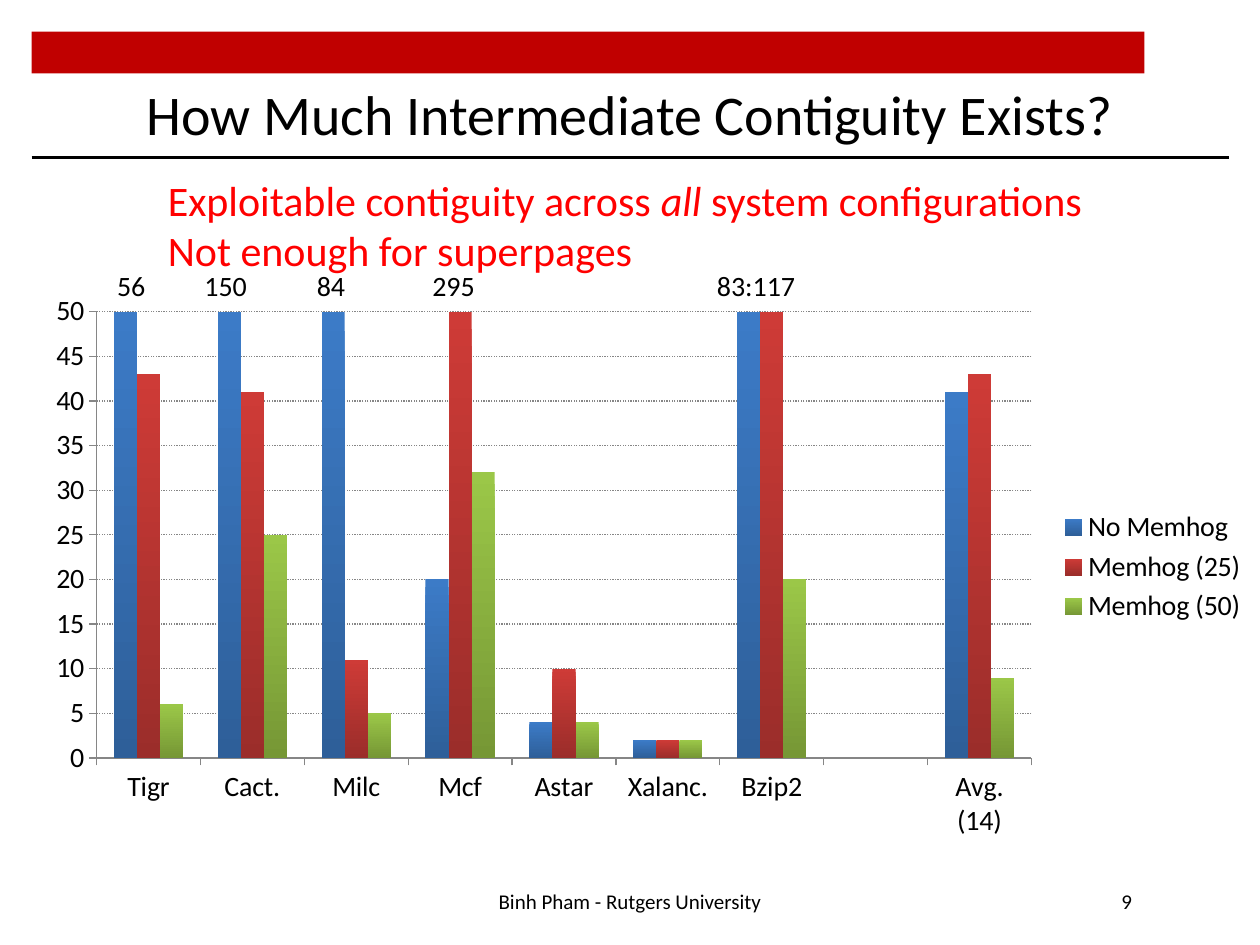
import pptx
import pptx.chart.data
import pptx.dml.color
import pptx.enum.chart
import pptx.enum.dml
import pptx.enum.shapes
import pptx.enum.text
import pptx.oxml
import pptx.oxml.ns
import pptx.util
from lxml import etree

RGB = pptx.dml.color.RGBColor
BLACK = RGB(0x00, 0x00, 0x00)
BANNER_RED = RGB(0xC0, 0x00, 0x00)
MESSAGE_RED = RGB(0xFF, 0x00, 0x00)
AXIS_GREY = RGB(0x86, 0x86, 0x86)
FONT = "Calibri"
ALIGN = pptx.enum.text.PP_ALIGN
ANCHOR = pptx.enum.text.MSO_ANCHOR
CELL = pptx.util.Inches(1) // 12  # the slide is 120 columns by 90 rows

CATEGORIES = ["Tigr", "Cact.", "Milc", "Mcf", "Astar", "Xalanc.", "Bzip2", "", "Avg. (14)"]
# name, values, colour at the top and at the foot of the bars
SERIES = [
    ("No Memhog", [56, 150, 84, 20, 4, 2, 83, None, 41],
     RGB(0x3C, 0x7B, 0xC7), RGB(0x2E, 0x5F, 0x99)),
    ("Memhog (25)", [43, 41, 11, 295, 10, 2, 118, None, 43],
     RGB(0xCE, 0x3B, 0x37), RGB(0x9B, 0x2D, 0x2A)),
    ("Memhog (50)", [6, 25, 5, 32, 4, 2, 20, None, 9],
     RGB(0x9B, 0xC7, 0x48), RGB(0x76, 0x97, 0x35)),
]
# text, left column, columns wide, alignment
CLIPPED_VALUES = [
    ("56", 8, 9, ALIGN.CENTER),
    ("150", 18, 7, ALIGN.CENTER),
    ("84", 29, 7, ALIGN.LEFT),
    ("295", 40, 7, ALIGN.LEFT),
    ("83:117", 67, 10, ALIGN.CENTER),
]


def cells(*box):
    """Turn columns and rows of the grid into lengths."""
    return [pptx.util.Emu(round(n * CELL)) for n in box]


def add_text(slide, box, paragraphs, size, color=BLACK, align=ALIGN.LEFT,
             anchor=ANCHOR.TOP, wrap=True):
    """Each paragraph is a list of (text, italic) runs."""
    frame = slide.shapes.add_textbox(*cells(*box)).text_frame
    frame.word_wrap = wrap
    frame.vertical_anchor = anchor
    for index, runs in enumerate(paragraphs):
        paragraph = frame.add_paragraph() if index else frame.paragraphs[0]
        paragraph.alignment = align
        for text, italic in runs:
            run = paragraph.add_run()
            run.text = text
            run.font.name = FONT
            run.font.size = pptx.util.Pt(size)
            run.font.italic = italic
            run.font.color.rgb = color


def add_header(slide, left, top, width, height):
    banner = slide.shapes.add_shape(pptx.enum.shapes.MSO_SHAPE.RECTANGLE,
                                    *cells(left, top, width - 8, height / 3))
    banner.shadow.inherit = False
    banner.fill.solid()
    banner.fill.fore_color.rgb = BANNER_RED
    banner.line.fill.background()
    bottom = top + height
    rule = slide.shapes.add_connector(pptx.enum.shapes.MSO_CONNECTOR.STRAIGHT,
                                      *cells(left, bottom, left + width, bottom))
    rule.line.color.rgb = BLACK
    rule.line.width = pptx.util.Pt(1.5)
    etree.SubElement(rule._element.spPr, pptx.oxml.ns.qn("a:effectLst"))
    add_text(slide, (left + 3, top + 4, width - 6, 7.5),
             [[("How Much Intermediate Contiguity Exists?", False)]],
             32, align=ALIGN.CENTER, anchor=ANCHOR.MIDDLE)


def add_footer(slide, top, height):
    for text, left, width, align in [("Binh Pham - Rutgers University", 41, 38, ALIGN.CENTER),
                                     ("9", 81, 28, ALIGN.RIGHT)]:
        add_text(slide, (left, top, width, height), [[(text, False)]], 12,
                 align=align, anchor=ANCHOR.MIDDLE)


def set_plot_area(chart, x, y, w, h):
    """Fix the inner plot area, in shares of the chart."""
    values = "".join(f'<c:{tag} val="{value}"/>' for tag, value in
                     [("xMode", "edge"), ("yMode", "edge"),
                      ("x", x), ("y", y), ("w", w), ("h", h)])
    layout = pptx.oxml.parse_xml(
        f'<c:layout {pptx.oxml.ns.nsdecls("c")}><c:manualLayout>'
        f'<c:layoutTarget val="inner"/>{values}</c:manualLayout></c:layout>')
    plot_area = chart._chartSpace.chart.plotArea
    for old in plot_area.findall(pptx.oxml.ns.qn("c:layout")):
        plot_area.remove(old)
    plot_area.insert(0, layout)


def add_contiguity_chart(slide, *box):
    data = pptx.chart.data.CategoryChartData()
    data.categories = CATEGORIES
    for name, values, *_ in SERIES:
        data.add_series(name, values)
    chart = slide.shapes.add_chart(pptx.enum.chart.XL_CHART_TYPE.COLUMN_CLUSTERED,
                                   *cells(*box), data).chart
    chart.has_title = False
    chart.font.name = FONT
    chart.font.size = pptx.util.Pt(16)
    chart.font.color.rgb = BLACK
    chart.has_legend = True
    chart.legend.position = pptx.enum.chart.XL_LEGEND_POSITION.RIGHT
    chart.legend.include_in_layout = False

    plot = chart.plots[0]
    plot.gap_width = 150
    plot.overlap = 0
    plot.vary_by_categories = False
    for series, (_, _, top_color, foot_color) in zip(plot.series, SERIES):
        fill = series.format.fill
        fill.gradient()
        fill.gradient_angle = 270
        for stop, color in zip(fill.gradient_stops, (top_color, foot_color)):
            stop.color.rgb = color

    for axis in (chart.category_axis, chart.value_axis):
        axis.major_tick_mark = pptx.enum.chart.XL_TICK_MARK.OUTSIDE
        axis.minor_tick_mark = pptx.enum.chart.XL_TICK_MARK.NONE
        axis.format.line.color.rgb = AXIS_GREY
    scale = chart.value_axis
    scale.minimum_scale, scale.maximum_scale, scale.major_unit = 0, 50, 5
    scale.has_major_gridlines = True
    gridline = scale.major_gridlines.format.line
    gridline.color.rgb = AXIS_GREY
    gridline.width = pptx.util.Pt(0.75)
    gridline.dash_style = pptx.enum.dml.MSO_LINE.ROUND_DOT
    set_plot_area(chart, 0.053, 0.05, 0.761, 0.787)


def add_clipped_values(slide, top, height):
    """Label the bars that run past the top of the scale."""
    for text, left, width, align in CLIPPED_VALUES:
        add_text(slide, (left, top, width, height), [[(text, False)]], 16, align=align)


def main():
    deck = pptx.Presentation()
    deck.slide_width, deck.slide_height = cells(120, 90)
    slide = deck.slides.add_slide(deck.slide_layouts[6])
    add_header(slide, 3, 3, 114, 12)
    add_footer(slide, 83.4, 4.8)
    add_clipped_values(slide, 25, 4.4)
    add_contiguity_chart(slide, 3, 27, 117, 54)
    add_text(slide, (14.8, 16, 92.6, 11),
             [[("Exploitable contiguity across ", False), ("all ", True),
               ("system configurations", False)],
              [("Not enough for superpages", False)]],
             24, MESSAGE_RED, wrap=False)
    deck.save("out.pptx")


if __name__ == "__main__":
    main()
